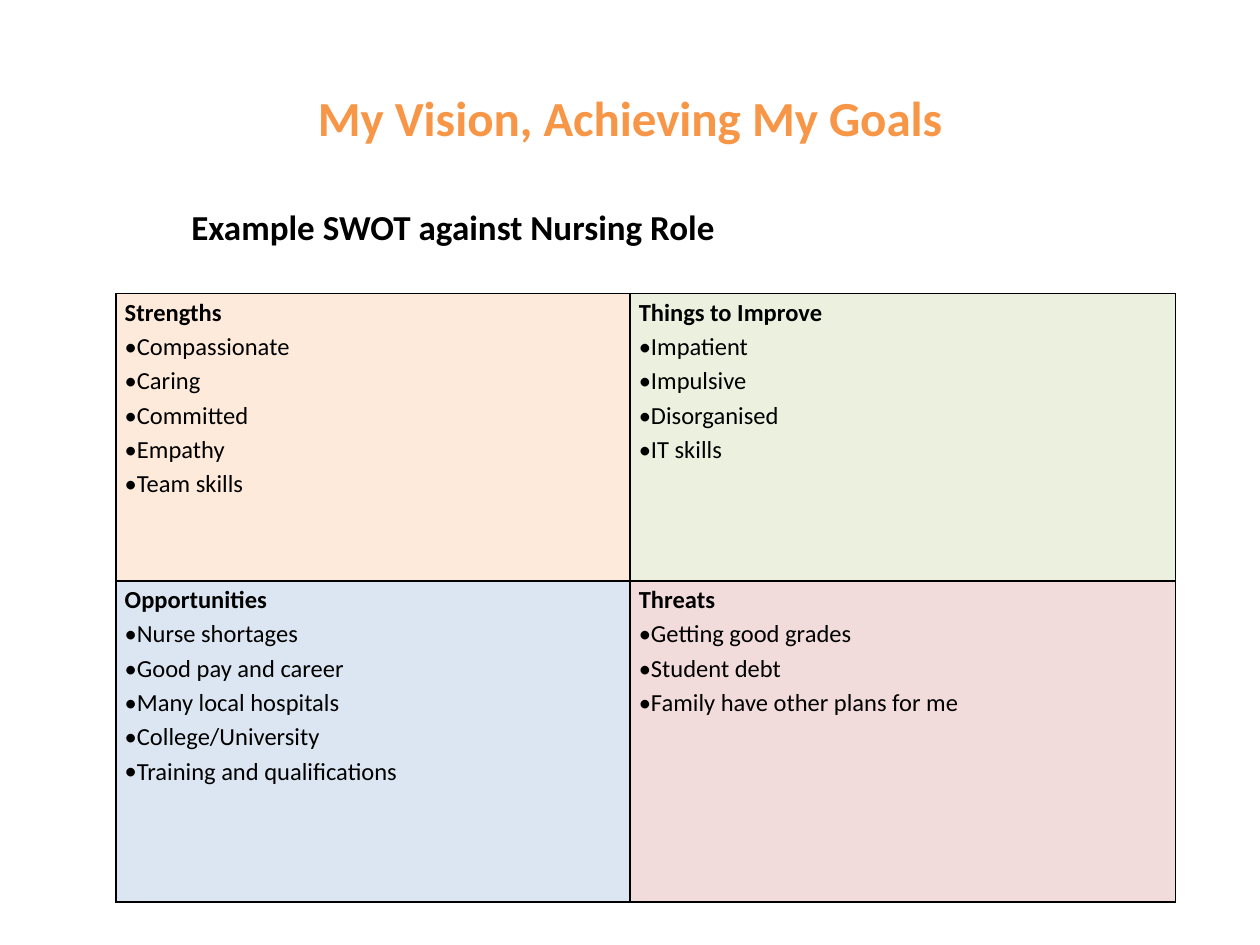
from typing import NamedTuple

from lxml.etree import SubElement
from pptx import Presentation
from pptx.dml.color import RGBColor
from pptx.enum.text import MSO_ANCHOR, PP_ALIGN
from pptx.oxml import parse_xml
from pptx.oxml.ns import nsdecls, qn
from pptx.util import Inches, Pt

FONT = "Calibri"
BLACK = RGBColor(0x00, 0x00, 0x00)
ORANGE = RGBColor(0xF7, 0x96, 0x46)
PEACH = RGBColor(0xFD, 0xEA, 0xDA)
PALE_GREEN = RGBColor(0xEB, 0xF1, 0xDE)
PALE_BLUE = RGBColor(0xDC, 0xE6, 0xF2)
PALE_RED = RGBColor(0xF2, 0xDC, 0xDB)

COLUMN_WIDTHS = (4.08, 4.33)
ROW_HEIGHTS = (2.28, 2.55)


class Quadrant(NamedTuple):
    heading: str
    points: tuple[str, ...]
    fill: RGBColor


SWOT = (
    (
        Quadrant("Strengths", ("Compassionate", "Caring", "Committed", "Empathy", "Team skills"), PEACH),
        Quadrant("Things to Improve", ("Impatient", "Impulsive", "Disorganised", "IT skills"), PALE_GREEN),
    ),
    (
        Quadrant(
            "Opportunities",
            ("Nurse shortages", "Good pay and career", "Many local hospitals",
             "College/University", "Training and qualifications"),
            PALE_BLUE,
        ),
        Quadrant("Threats", ("Getting good grades", "Student debt", "Family have other plans for me"), PALE_RED),
    ),
)


def style(paragraph, size: int, color: RGBColor = BLACK, bold: bool = True) -> None:
    for run in paragraph.runs:
        run.font.name = FONT
        run.font.size = Pt(size)
        run.font.bold = bold
        run.font.color.rgb = color


def place(shape, left: float, top: float, width: float, height: float) -> None:
    shape.left, shape.top = Inches(left), Inches(top)
    shape.width, shape.height = Inches(width), Inches(height)


def add_bullet(paragraph) -> None:
    properties = paragraph._p.get_or_add_pPr()
    SubElement(properties, qn("a:buFont"), typeface=FONT)
    SubElement(properties, qn("a:buChar"), char="•")


def add_borders(cell) -> None:
    properties = cell._tc.get_or_add_tcPr()
    for position, side in enumerate(("lnL", "lnR", "lnT", "lnB")):
        properties.insert(position, parse_xml(
            f'<a:{side} {nsdecls("a")} w="{Pt(1)}"><a:solidFill>'
            f'<a:srgbClr val="{BLACK}"/></a:solidFill></a:{side}>'
        ))


def fill_quadrant(cell, quadrant: Quadrant) -> None:
    cell.fill.solid()
    cell.fill.fore_color.rgb = quadrant.fill
    cell.margin_left = cell.margin_right = Inches(0.07)
    cell.margin_top = cell.margin_bottom = 0
    cell.text_frame.text = "\n".join((quadrant.heading, *quadrant.points))
    for index, paragraph in enumerate(cell.text_frame.paragraphs):
        paragraph.line_spacing = 1.15
        style(paragraph, 14, bold=index == 0)
        if index:
            add_bullet(paragraph)
    add_borders(cell)


def add_swot_table(slide) -> None:
    table = slide.shapes.add_table(
        len(ROW_HEIGHTS), len(COLUMN_WIDTHS), Inches(0.92), Inches(2.33),
        Inches(sum(COLUMN_WIDTHS)), Inches(sum(ROW_HEIGHTS)),
    ).table
    table.first_row = table.horz_banding = False
    for column, width in zip(table.columns, COLUMN_WIDTHS):
        column.width = Inches(width)
    for row, height, quadrants in zip(table.rows, ROW_HEIGHTS, SWOT):
        row.height = Inches(height)
        for cell, quadrant in zip(row.cells, quadrants):
            fill_quadrant(cell, quadrant)


def main() -> None:
    presentation = Presentation()
    presentation.slide_width, presentation.slide_height = Inches(10), Inches(7.5)
    slide = presentation.slides.add_slide(presentation.slide_layouts[5])

    title = slide.shapes.title
    place(title, 0.5, 0.3, 9, 1.25)
    title.text_frame.text = "My Vision, Achieving My Goals"
    title.text_frame.vertical_anchor = MSO_ANCHOR.MIDDLE
    heading = title.text_frame.paragraphs[0]
    heading.alignment = PP_ALIGN.CENTER
    style(heading, 28, ORANGE)

    add_swot_table(slide)

    subtitle = slide.shapes.add_textbox(0, 0, 0, 0)
    place(subtitle, 1.42, 1.58, 4.92, 0.44)
    subtitle.text_frame.word_wrap = True
    subtitle.text_frame.text = "Example SWOT against Nursing Role"
    style(subtitle.text_frame.paragraphs[0], 20)

    presentation.save("out.pptx")


if __name__ == "__main__":
    main()
